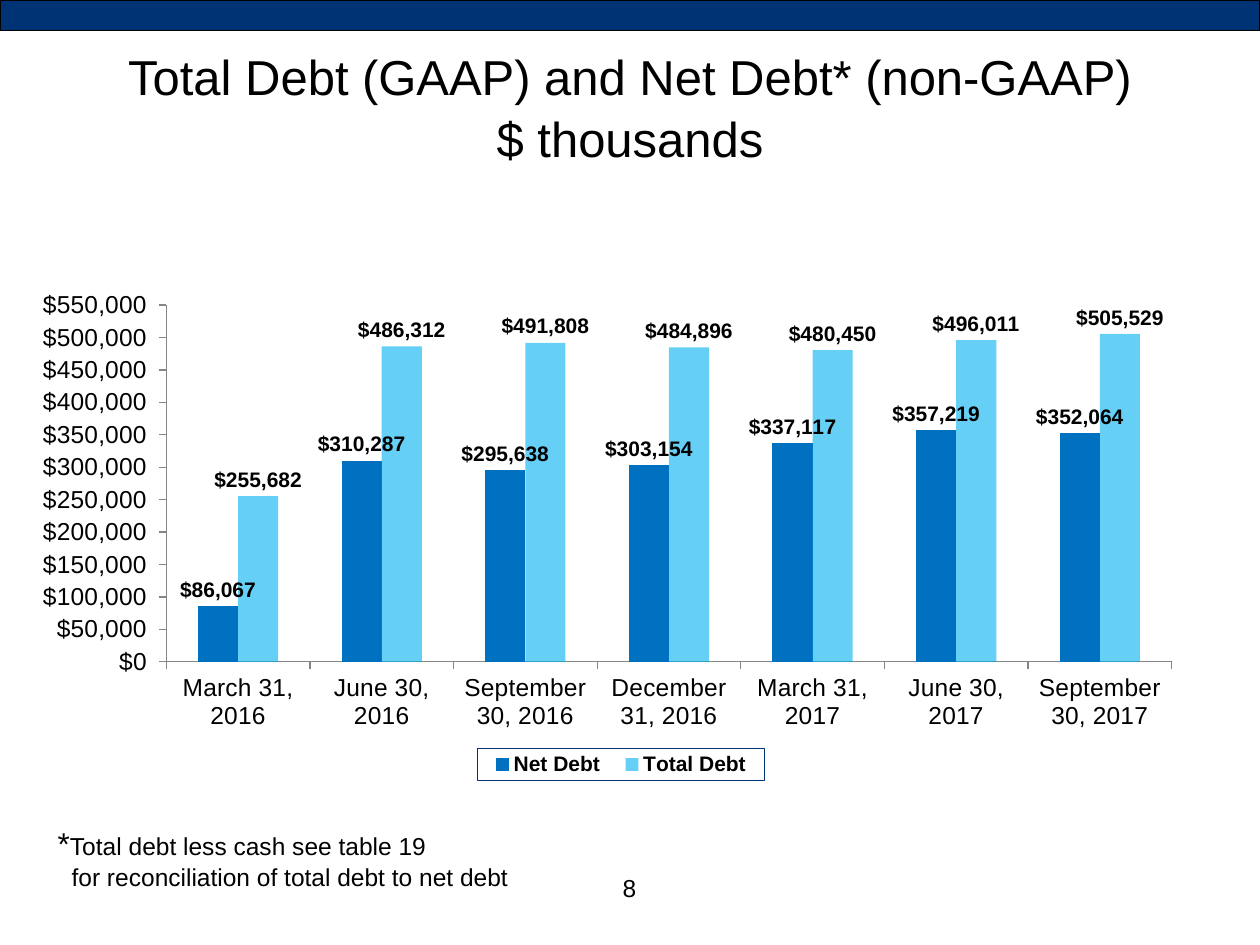
"""Build the total debt and net debt slide with its clustered column chart."""
from lxml.etree import SubElement
from pptx import Presentation
from pptx.chart.data import CategoryChartData
from pptx.dml.color import RGBColor
from pptx.enum.chart import XL_CHART_TYPE, XL_LABEL_POSITION, XL_LEGEND_POSITION, XL_TICK_MARK
from pptx.enum.shapes import MSO_SHAPE
from pptx.enum.text import PP_ALIGN
from pptx.oxml import parse_xml
from pptx.oxml.ns import nsdecls, qn
from pptx.util import Pt

PX = 9144
BLACK = RGBColor(0x00, 0x00, 0x00)
NAVY = RGBColor(0x00, 0x33, 0x73)
BLUE = RGBColor(0x00, 0x70, 0xC0)
SKY = RGBColor(0x00, 0xB0, 0xF0)
GRAY = RGBColor(0x86, 0x86, 0x86)


def set_font(font, size, bold=False):
    font.name = "Arial"
    font.size = Pt(size)
    font.bold = bold
    font.color.rgb = BLACK


def set_layout(parent, index, x, y, w, h, inner=False):
    for old in parent.findall(qn("c:layout")):
        parent.remove(old)
    layout = parse_xml(f"<c:layout {nsdecls('c')}/>")
    manual = SubElement(layout, qn("c:manualLayout"))
    settings = [("layoutTarget", "inner")] if inner else []
    settings += [("xMode", "edge"), ("yMode", "edge"), ("x", x), ("y", y), ("w", w), ("h", h)]
    for tag, value in settings:
        SubElement(manual, qn(f"c:{tag}")).set("val", str(value))
    parent.insert(index, layout)


prs = Presentation()
prs.slide_width = 1000 * PX
prs.slide_height = 750 * PX
slide = prs.slides.add_slide(prs.slide_layouts[6])
shapes = slide.shapes

banner = shapes.add_shape(MSO_SHAPE.RECTANGLE, 0, 0, 1000 * PX, 24 * PX)
banner.shadow.inherit = False
banner.fill.solid()
banner.fill.fore_color.rgb = NAVY
banner.line.color.rgb = BLACK
banner.line.width = Pt(0.75)

title = shapes.add_textbox(50 * PX, 30 * PX, 900 * PX, 125 * PX).text_frame
title.word_wrap = True
heading = title.paragraphs[0]
heading.text = "Total Debt (GAAP) and Net Debt* (non-GAAP)\v$ thousands"
heading.alignment = PP_ALIGN.CENTER
heading.line_spacing = 1.05
for run in heading.runs:
    set_font(run.font, 28)

debt = CategoryChartData(number_format='"$"#,##0')
debt.categories = ["March 31, 2016", "June 30, 2016", "September 30, 2016", "December 31, 2016",
                   "March 31, 2017", "June 30, 2017", "September 30, 2017"]
debt.add_series("Net Debt", [86067, 310287, 295638, 303154, 337117, 357219, 352064])
debt.add_series("Total Debt", [255682, 486312, 491808, 484896, 480450, 496011, 505529])
chart = shapes.add_chart(XL_CHART_TYPE.COLUMN_CLUSTERED, 18 * PX, 195 * PX,
                         950 * PX, 429 * PX, debt).chart
chart.has_title = False
set_font(chart.font, 12, True)

columns = chart.plots[0]
columns.gap_width = 158
columns.overlap = 0
columns.vary_by_categories = False
for series, color in zip(columns.series, (BLUE, SKY)):
    series.format.fill.solid()
    series.format.fill.fore_color.rgb = color
    series.invert_if_negative = False
    labels = series.data_labels
    labels.show_value = True
    labels.position = XL_LABEL_POSITION.OUTSIDE_END
    labels.number_format = '"$"#,##0'
    labels.number_format_is_linked = False
    set_font(labels.font, 12, True)
total_debt = columns.series[1]
sky_fill = total_debt.format.fill.fore_color
sky_color = next(total_debt._element.iter(qn("a:srgbClr")))
SubElement(sky_color, qn("a:alpha")).set("val", "60000")

dates, amounts = chart.category_axis, chart.value_axis
for axis in (dates, amounts):
    axis.has_major_gridlines = False
    axis.major_tick_mark = XL_TICK_MARK.OUTSIDE
    axis.minor_tick_mark = XL_TICK_MARK.NONE
    axis.format.line.color.rgb = GRAY
    axis.format.line.width = Pt(0.75)
    set_font(axis.tick_labels.font, 14)
amounts.minimum_scale = 0
amounts.maximum_scale = 550000
amounts.major_unit = 50000
amounts.tick_labels.number_format = '"$"#,##0_);[Red]\\("$"#,##0\\)'
amounts.tick_labels.number_format_is_linked = False

chart.has_legend = True
legend = chart.legend
legend.position = XL_LEGEND_POSITION.BOTTOM
legend.include_in_layout = False
set_font(legend.font, 12, True)
legend_box = legend._element
set_layout(legend_box, 1, 0.38, 0.93, 0.24, 0.06)
legend_box.find(qn("c:txPr")).addprevious(parse_xml(
    f'<c:spPr {nsdecls("c", "a")}><a:ln w="9525"><a:solidFill>'
    f'<a:srgbClr val="{NAVY}"/></a:solidFill></a:ln></c:spPr>'))
plot_area = next(chart._chartSpace.iter(qn("c:plotArea")))
set_layout(plot_area, 0, 0.12, 0.11, 0.84, 0.66, inner=True)

page_number = shapes.add_textbox(484 * PX, 688 * PX, 31 * PX, 34 * PX).text_frame
page_number.word_wrap = False
page_number.text = "8"
page_number.paragraphs[0].alignment = PP_ALIGN.CENTER
set_font(page_number.paragraphs[0].runs[0].font, 14)

footnote = shapes.add_textbox(36 * PX, 649 * PX, 435 * PX, 64 * PX).text_frame
footnote.word_wrap = True
note = footnote.paragraphs[0]
note_indent = note._p.get_or_add_pPr()
note_indent.set("marL", str(11 * PX))
note_indent.set("indent", str(-11 * PX))
for words, size in (("*", 18), ("Total debt less cash see table 19", 14),
                    ("for reconciliation of total debt to net debt", 14)):
    if words.startswith("for"):
        note.add_line_break()
    run = note.add_run()
    run.text = words
    set_font(run.font, size)

prs.save("out.pptx")
